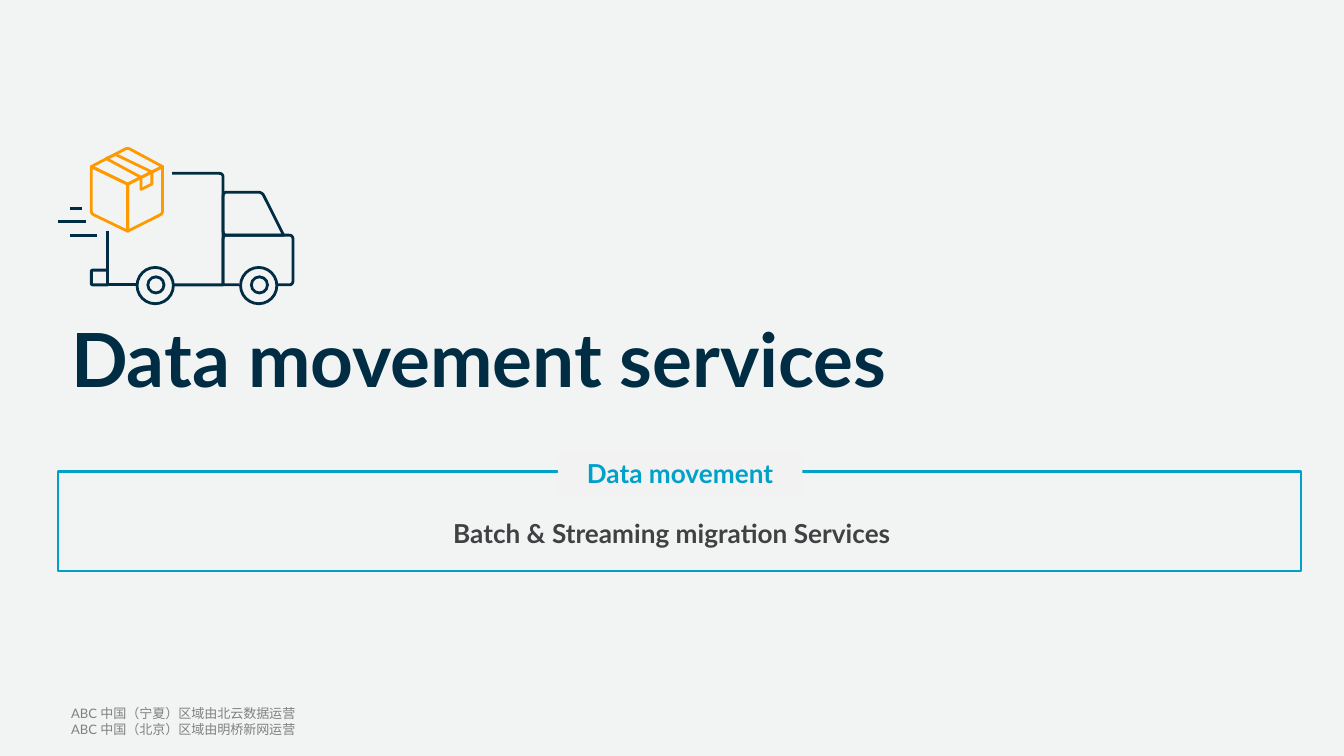
from math import hypot

from lxml import etree
from pptx import Presentation
from pptx.dml.color import RGBColor
from pptx.enum import shapes, text
from pptx.oxml.ns import qn

PX = 9144  # 100 px to the inch
FONT = "Lato"
NAVY, GOLD, TEAL, PALE = "002D43", "FF9900", "00A0C8", "F2F4F4"

TITLE = "Data movement services"
LABEL = "Data movement"
BODY = "Batch & Streaming migration Services"
NOTES = ["ABC 中国（宁夏）区域由北云数据运营",
         "ABC 中国（北京）区域由明桥新网运营"]

# Outlines: colour, closed, corners as (x, y) or (x, y, radius)
PATHS = [
    (NAVY, True, [(211, 175), (166, 175, 3), (166, 143, 3), (195, 143, 3)]),  # window
    (NAVY, True, [(80, 212), (68, 212, 1), (68, 201, 1), (80, 201)]),  # bumper
    (NAVY, False, [(178, 212), (166, 212), (166, 175, 3), (218, 175, 3),
                   (218, 212, 3), (207, 212)]),  # cab
    (NAVY, False, [(80, 172), (80, 212), (101, 212)]),  # cargo rear
    (NAVY, False, [(129, 212), (166, 212), (166, 129, 3), (128, 129)]),  # cargo front
    (GOLD, True, [(68, 124), (95, 137), (121, 124), (95, 110, 2)]),  # box top
    (GOLD, True, [(68, 124), (68, 159, 2), (95, 172), (95, 137)]),  # box left
    (GOLD, True, [(121, 124), (121, 159, 2), (95, 172), (95, 137)]),  # box right
    (GOLD, True, [(113, 128), (86, 115), (79, 118), (105, 132),
                  (105, 141), (113, 137)]),  # tape
]
WHEELS = [(102, 199, 27), (179, 199, 27), (110, 206, 12), (187, 206, 12)]
SPEED = [(52, 72, 175), (52, 61, 155), (43, 64, 165)]


def color(code):
    return RGBColor.from_string(code)


def place(*box):
    return [n * PX for n in box]


def stroke(shape, code, width=1.5):
    shape.line.color.rgb = color(code)
    shape.line.width = int(width * 12700)


def write(shape, lines, size, code, bold=False, align=text.PP_ALIGN.LEFT):
    frame = shape.text_frame
    frame.text = "\n".join(lines)
    frame.word_wrap = True
    frame.auto_size = text.MSO_AUTO_SIZE.NONE
    frame.vertical_anchor = text.MSO_ANCHOR.MIDDLE
    for para in frame.paragraphs:
        para.alignment = align
        for run in para.runs:
            font = run.font
            font.name, font.bold = FONT, bold
            font.size = size * 12700
            font.color.rgb = color(code)
    return frame


def panel(box, fill):
    shape = slide.shapes.add_shape(shapes.MSO_SHAPE.RECTANGLE, *place(*box))
    shape.shadow.inherit = False
    shape.fill.solid()
    shape.fill.fore_color.rgb = color(fill)
    shape.line.fill.background()
    return shape


def bend(corners):
    """Replace each corner that has a radius by points on a quadratic curve."""
    dots = []
    for i, (x, y, *radius) in enumerate(corners):
        if not radius:
            dots.append((x, y))
            continue
        ends = []
        for px, py, *_ in (corners[i - 1], corners[(i + 1) % len(corners)]):
            part = radius[0] / hypot(px - x, py - y)
            ends.append((x + (px - x) * part, y + (py - y) * part))
        (ax, ay), (bx, by) = ends
        for step in range(7):
            t = step / 6
            p, q, r = (1 - t) ** 2, 2 * t * (1 - t), t * t
            dots.append((p * ax + q * x + r * bx, p * ay + q * y + r * by))
    return [(round(x * PX), round(y * PX)) for x, y in dots]


def draw(group):
    for code, closed, corners in PATHS:
        first, *rest = bend(corners)
        pen = group.shapes.build_freeform(*first, scale=1.0)
        pen.add_line_segments(rest, close=closed)
        shape = pen.convert_to_shape()
        shape.shadow.inherit = False
        shape.fill.background()
        stroke(shape, code)
    for x, y, size in WHEELS:
        wheel = group.shapes.add_shape(shapes.MSO_SHAPE.OVAL, *place(x, y, size, size))
        wheel.shadow.inherit = False
        wheel.fill.background()
        stroke(wheel, NAVY)
    for left, right, y in SPEED:
        line = group.shapes.add_connector(
            shapes.MSO_CONNECTOR.STRAIGHT, *place(left, y, right, y))
        stroke(line, NAVY)
        etree.SubElement(line._element.spPr, qn("a:effectLst"))


deck = Presentation()
deck.slide_width = 1000 * PX
deck.slide_height = deck.slide_width * 9 // 16
slide = deck.slides.add_slide(deck.slide_layouts[5])
slide.background.fill.solid()
slide.background.fill.fore_color.rgb = color(PALE)

title = slide.shapes.title
title.left, title.top, title.width, title.height = place(43, 215, 850, 102)
write(title, [TITLE], 40, NAVY, True)

note = slide.shapes.add_textbox(*place(53, 525, 486, 24))
frame = write(note, NOTES, 7, "808080")
frame.margin_left = frame.margin_right = frame.margin_top = frame.margin_bottom = 0
frame.vertical_anchor = text.MSO_ANCHOR.TOP

stroke(panel((43, 351, 925, 74), PALE), TEAL, 1.25)
tag = panel((415, 335, 182, 34), "F2F2F2")
write(tag, [LABEL], 14, "00A1C9", True, text.PP_ALIGN.CENTER)
body = slide.shapes.add_textbox(*place(160, 380, 680, 34))
write(body, [BODY], 14, "414042", True, text.PP_ALIGN.CENTER)

draw(slide.shapes.add_group_shape())
deck.save("out.pptx")
